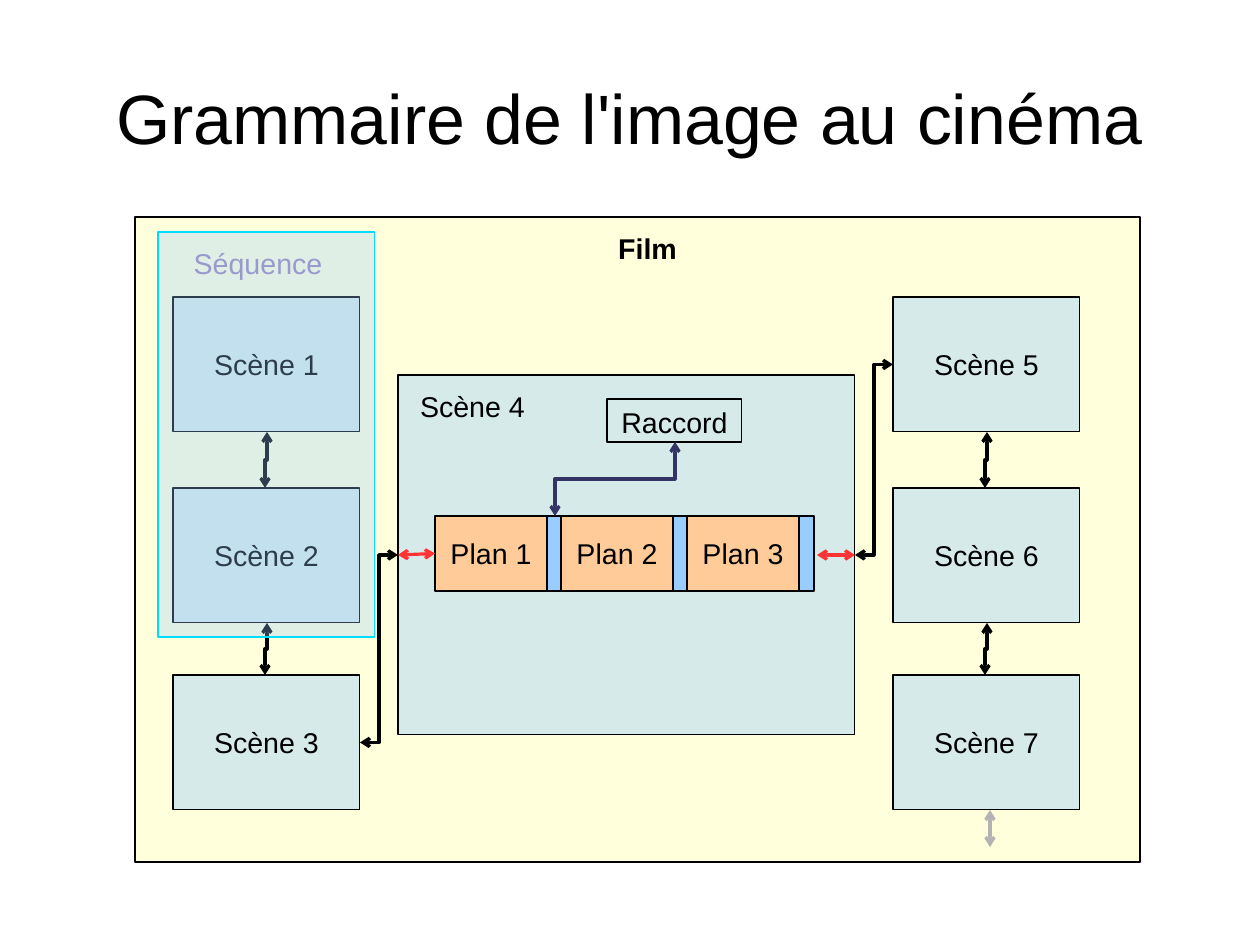
from lxml import etree
from pptx import Presentation
from pptx.dml.color import RGBColor
from pptx.enum.shapes import MSO_CONNECTOR, MSO_SHAPE
from pptx.enum.text import MSO_ANCHOR, PP_ALIGN
from pptx.oxml.ns import qn
from pptx.util import Pt

PX = 8000  # EMU per px
RECT = MSO_SHAPE.RECTANGLE
STRAIGHT, ELBOW = MSO_CONNECTOR.STRAIGHT, MSO_CONNECTOR.ELBOW
MIDDLE, TOP = MSO_ANCHOR.MIDDLE, MSO_ANCHOR.TOP
CENTER, LEFT = PP_ALIGN.CENTER, PP_ALIGN.LEFT
COLORS = {
    "black": "000000", "cream": "FFFFCC", "blue": "99CCFF", "orange": "FFCC99",
    "red": "FF3333", "navy": "333366", "gray": "B3B3B3", "cyan": "00DCFF",
    "lilac": "9999CC",
}
RGB = {name: RGBColor.from_string(value) for name, value in COLORS.items()}

prs = Presentation()
prs.slide_width, prs.slide_height = 1260 * PX, 945 * PX
slide = prs.slides.add_slide(prs.slide_layouts[5])
shapes = slide.shapes


def add_box(box, text="", fill=None, opacity=100, line=None, color="black",
            bold=False, align=CENTER, anchor=MIDDLE):
    """Rectangle, or plain text box when there is no line."""
    box = [v * PX for v in box]
    if line:
        s = shapes.add_shape(RECT, *box)
        s.shadow.inherit = False
        s.line.color.rgb = RGB[line]
        s.line.width = Pt(0)
    else:
        s = shapes.add_textbox(*box)
    if fill:
        s.fill.solid()
        s.fill.fore_color.rgb = RGB[fill]
        if opacity < 100:
            clr = s._element.spPr.find(qn("a:solidFill"))[0]
            etree.SubElement(clr, qn("a:alpha"), val=str(opacity * 1000))
    else:
        s.fill.background()
    if text:
        tf = s.text_frame
        tf.word_wrap, tf.vertical_anchor = True, anchor
        p = tf.paragraphs[0]
        p.alignment = align
        r = p.add_run()
        r.text = text
        fmt = {"name": "Arial", "size": Pt(18), "bold": bold}
        for key, value in fmt.items():
            setattr(r.font, key, value)
        r.font.color.rgb = RGB[color]
    return s


def add_arrow(kind, x1, y1, x2, y2, color="black", down=False):
    """Double-headed connector; down makes an elbow leave vertically, to the left."""
    if down:
        cx, cy, w, h = (x1 + x2) / 2, (y1 + y2) / 2, y2 - y1, x1 - x2
        x1, y1, x2, y2 = cx - w / 2, cy - h / 2, cx + w / 2, cy + h / 2
    s = shapes.add_connector(kind, *[int(v * PX) for v in (x1, y1, x2, y2)])
    s.line.color.rgb = RGB[color]
    s.line.width = Pt(0)
    spPr = s._element.spPr
    if down:
        spPr.find(qn("a:xfrm")).set("rot", "5400000")
    ln = spPr.find(qn("a:ln"))
    for end in ("a:headEnd", "a:tailEnd"):
        etree.SubElement(ln, qn(end), type="arrow")
    etree.SubElement(spPr, qn("a:effectLst"))
    return s


# Title
title = shapes.title
title.left, title.top, title.width, title.height = [v * PX for v in (63, 38, 1134, 158)]
tf = title.text_frame
tf.word_wrap, tf.vertical_anchor = True, MIDDLE
tf.margin_left = tf.margin_top = tf.margin_right = tf.margin_bottom = 0
p = tf.paragraphs[0]
p.alignment = CENTER
r = p.add_run()
r.text = "Grammaire de l'image au cinéma"
r.font.name, r.font.size = "Arial", Pt(44)
r.font.color.rgb = RGB["black"]

# Film
add_box((135, 217, 1005, 645), fill="cream", opacity=70, line="black")
add_box((607, 225, 90, 45), "Film", bold=True, align=LEFT, anchor=TOP)

# Scenes: two columns of three, and the large one between them
SCENE_W, SCENE_H = 187, 135
SCENE_TOPS = (297, 488, 675)
scenes = {}
for first, x in ((1, 173), (5, 893)):
    for n, y in enumerate(SCENE_TOPS, first):
        scenes[n] = add_box((x, y, SCENE_W, SCENE_H), f"Scène {n}",
                            fill="blue", opacity=40, line="black")
scenes[4] = add_box((398, 375, 457, 360), fill="blue", opacity=40, line="black")
add_box((405, 383, 135, 43), "Scène 4", anchor=TOP)

# Shots, each followed by its joint
plans = []
for i in range(3):
    x = 435 + 126 * i
    plans.append(add_box((x, 516, 112, 75), f"Plan {i + 1}", fill="orange", line="black"))
    add_box((x + 112, 516, 15, 75), fill="blue", line="black")
add_box((607, 399, 135, 43), "Raccord", line="black", anchor=TOP)

# Arrows down the columns
for x in (267, 987):
    for y, below in zip(SCENE_TOPS, SCENE_TOPS[1:]):
        add_arrow(ELBOW, x, y + SCENE_H, x - 2, below, down=True)

# Arrows between the columns and scene 4
for a, b, ends in ((3, 4, (360, 743, 398, 555)), (4, 5, (855, 555, 893, 364))):
    s = add_arrow(ELBOW, *ends)
    s.begin_connect(scenes[a], 3)
    s.end_connect(scenes[b], 1)

# Arrows inside scene 4
s = add_arrow(STRAIGHT, 398, 555, 435, 555, "red")
s.begin_connect(scenes[4], 1)
s.end_connect(plans[0], 1)
s = add_arrow(STRAIGHT, 817, 555, 855, 555, "red")
s.end_connect(scenes[4], 3)
add_arrow(ELBOW, 675, 442, 555, 516, "navy", down=True)

# Arrow leaving scene 7
add_arrow(STRAIGHT, 990, 810, 990, 847, "gray")

# Sequence
add_box((158, 232, 217, 405), fill="blue", opacity=30, line="cyan")
add_box((179, 240, 158, 43), "Séquence", color="lilac", anchor=TOP)

prs.save("out.pptx")
